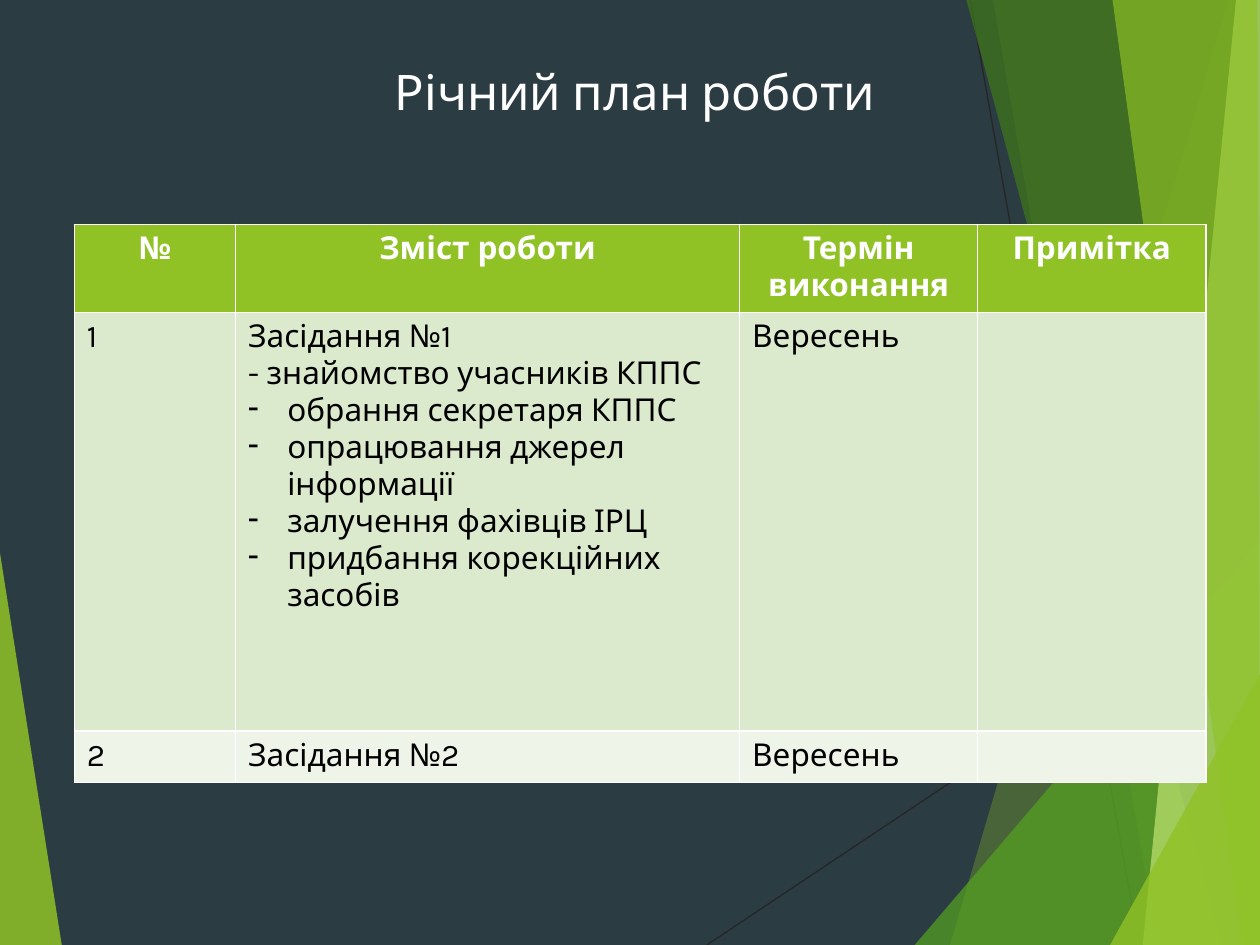
from lxml import etree
from pptx import Presentation, util as u
from pptx.dml.color import RGBColor
from pptx.enum import shapes, text
from pptx.oxml import ns

WIDTH, HEIGHT = 10, 7.5
FONT = "Karla"
COLORS = {
    "background": "2C3C43", "line": "262626", "white": "FFFFFF", "black": "000000",
    "lime": "90C226", "green": "54A021", "forest": "3F7819", "pale": "C0E474",
    "odd_row": "DBE9CD", "even_row": "EEF4E8",
}
RAYS = [((5.61, HEIGHT), (WIDTH, 4.57)), ((7.7, 0), (9.04, HEIGHT))]
FACETS = [
    ("lime", 85, [(0, 4.39), (0.49, HEIGHT), (0, HEIGHT)]),
    ("lime", 30, [(9.75, 0), (7.54, HEIGHT), (WIDTH, HEIGHT), (WIDTH, 0)]),
    ("lime", 20, [(7.88, 0), (9.19, HEIGHT), (WIDTH, HEIGHT), (WIDTH, 0)]),
    ("green", 72, [(7.26, HEIGHT), (WIDTH, 4.29), (WIDTH, HEIGHT)]),
    ("forest", 70, [(7.67, 0), (9.7, HEIGHT), (WIDTH, HEIGHT), (WIDTH, 0)]),
    ("pale", 70, [(9.81, 0), (9.07, HEIGHT), (WIDTH, HEIGHT), (WIDTH, 0)]),
    ("lime", 65, [(8.83, 0), (9.86, HEIGHT), (WIDTH, HEIGHT), (9.98, 0)]),
    ("lime", 80, [(8.81, HEIGHT), (WIDTH, 5.35), (WIDTH, HEIGHT)]),
]
COLUMNS = [1.28, 4, 1.89, 1.81]
ROWS = [0.69, 3.32, 0.41]
MEETING = [
    "Засідання №1",
    "- знайомство учасників КППС",
    "обрання секретаря КППС",
    "опрацювання джерел інформації",
    "залучення фахівців ІРЦ",
    "придбання корекційних засобів",
]
FIRST_BULLET = 2
CONTENT = [
    ["№", "Зміст роботи", "Термін виконання", "Примітка"],
    ["1", "\n".join(MEETING), "Вересень", ""],
    ["2", "Засідання №2", "Вересень", ""],
]
ROW_FILLS = ["lime", "odd_row", "even_row"]


def color(name):
    return RGBColor.from_string(COLORS[name])


def paint(fill, name):
    fill.solid()
    fill.fore_color.rgb = color(name)


def style_text(para, size, name, bold=False, align=text.PP_ALIGN.LEFT):
    para.alignment = align
    for span in para.runs:
        span.font.name = FONT
        span.font.size = u.Pt(size)
        span.font.bold = bold
        span.font.color.rgb = color(name)


def add_ray(page, start, end):
    ray = page.shapes.add_connector(
        shapes.MSO_CONNECTOR.STRAIGHT, *(u.Inches(value) for value in start + end))
    ray.line.color.rgb = color("line")
    ray.line.width = u.Pt(0.75)
    etree.SubElement(ray._element.spPr, ns.qn("a:effectLst"))


def add_facet(page, name, opacity, points):
    corners = [(u.Inches(x), u.Inches(y)) for x, y in points]
    builder = page.shapes.build_freeform(*corners[0])
    builder.add_line_segments(corners[1:], close=True)
    facet = builder.convert_to_shape()
    facet.shadow.inherit = False
    facet.line.fill.background()
    paint(facet.fill, name)
    tint = facet._element.spPr.find(".//" + ns.qn("a:srgbClr"))
    etree.SubElement(tint, ns.qn("a:alpha"), val=str(opacity * 1000))


def add_title(page, words):
    box = page.shapes.add_textbox(*(u.Inches(value) for value in (0.51, 0.44, 9.06, 1.02)))
    box.text_frame.word_wrap = True
    box.text_frame.text = words
    para = box.text_frame.paragraphs[0]
    para.space_before, para.space_after = u.Pt(6), u.Pt(12)
    style_text(para, 28, "white", align=text.PP_ALIGN.CENTER)


def add_dash(para):
    properties = para._p.get_or_add_pPr()
    indent = u.Inches(0.31)
    properties.set("marL", str(indent))
    properties.set("indent", str(-indent))
    etree.SubElement(properties, ns.qn("a:buChar"), char="-")


def add_plan(page):
    frame = page.shapes.add_table(
        len(ROWS), len(COLUMNS), u.Inches(0.59), u.Inches(1.78),
        u.Inches(sum(COLUMNS)), u.Inches(sum(ROWS)))
    plan = frame.table
    for column, width in zip(plan.columns, COLUMNS):
        column.width = u.Inches(width)
    for index, row in enumerate(plan.rows):
        row.height = u.Inches(ROWS[index])
        header = index == 0
        for cell, words in zip(row.cells, CONTENT[index]):
            paint(cell.fill, ROW_FILLS[index])
            cell.text_frame.text = words
            for number, para in enumerate(cell.text_frame.paragraphs):
                style_text(para, 18, "white" if header else "black", header,
                           text.PP_ALIGN.CENTER if header else text.PP_ALIGN.LEFT)
                if number >= FIRST_BULLET:
                    add_dash(para)


def main():
    deck = Presentation()
    deck.slide_width, deck.slide_height = u.Inches(WIDTH), u.Inches(HEIGHT)
    page = deck.slides.add_slide(deck.slide_layouts[6])
    paint(page.background.fill, "background")
    for start, end in RAYS:
        add_ray(page, start, end)
    for name, opacity, points in FACETS:
        add_facet(page, name, opacity, points)
    add_title(page, "Річний план роботи")
    add_plan(page)
    deck.save("out.pptx")


if __name__ == "__main__":
    main()
